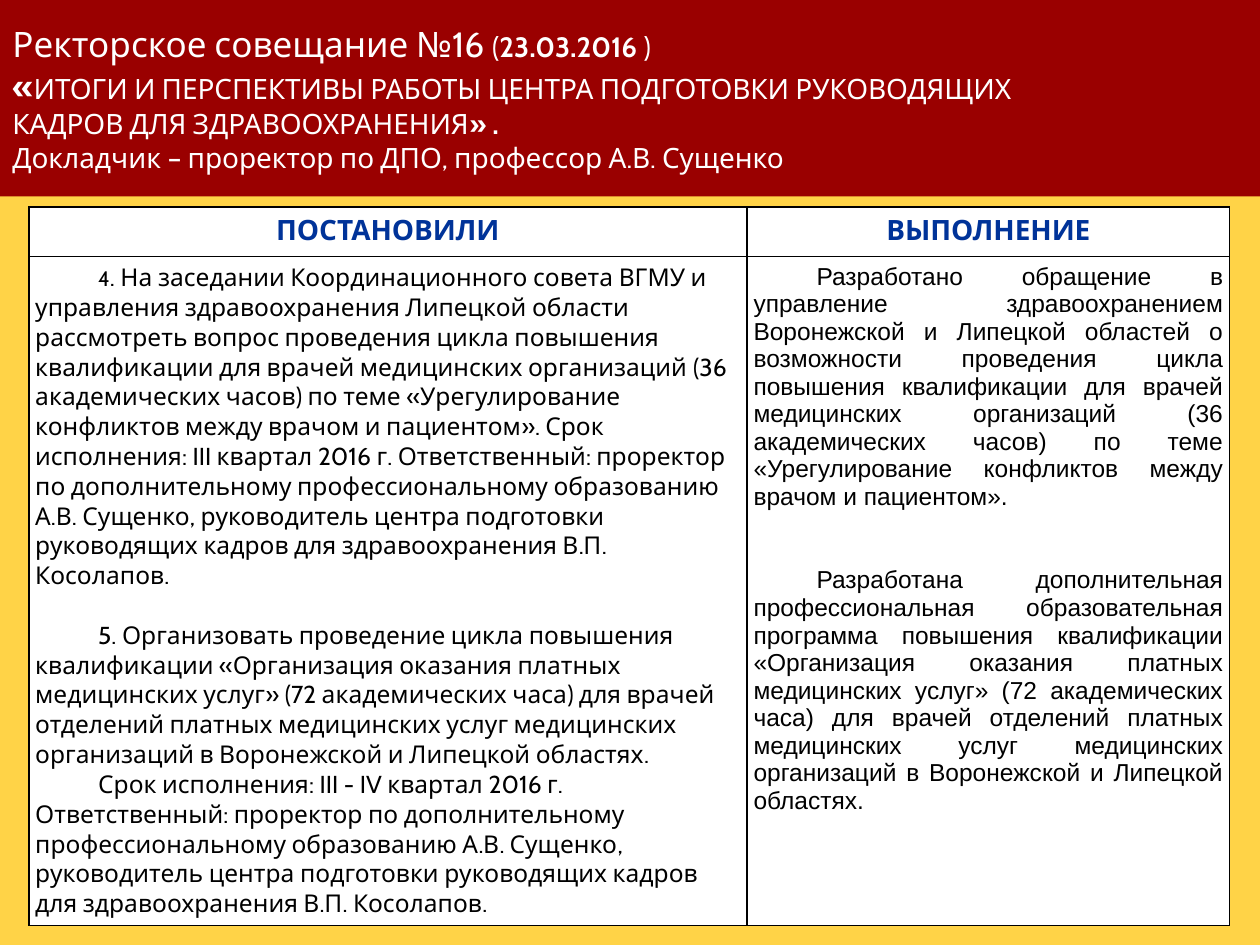
from dataclasses import dataclass

from lxml.etree import SubElement
from pptx import Presentation
from pptx.dml.color import RGBColor
from pptx.enum.shapes import MSO_SHAPE
from pptx.enum.text import MSO_ANCHOR, PP_ALIGN
from pptx.oxml.ns import qn
from pptx.util import Cm, Pt


@dataclass(frozen=True)
class Theme:
    """Colours, fonts and type sizes of the slide."""
    page: str = "FFD347"
    band: str = "9A0000"
    white: str = "FFFFFF"
    black: str = "000000"
    blue: str = "003399"
    main: str = "Cabin"
    plain: str = "Arial"
    title: int = 20
    head: int = 16
    body: int = 14
    small: int = 12


THEME = Theme()

TITLE = [
    [("Ректорское совещание №16 ", THEME.title, False), ("(", THEME.head, False),
     ("23.03.2016 ", THEME.head, True), (")", THEME.head, False)],
    [("«", THEME.title, True),
     ("ИТОГИ И ПЕРСПЕКТИВЫ РАБОТЫ ЦЕНТРА ПОДГОТОВКИ РУКОВОДЯЩИХ", THEME.head, False)],
    [("КАДРОВ ДЛЯ ЗДРАВООХРАНЕНИЯ", THEME.head, False), ("» .", THEME.head, True)],
    [("Докладчик – проректор по ДПО, профессор А.В. Сущенко", THEME.head, False)],
]

HEADS = ["ПОСТАНОВИЛИ", "ВЫПОЛНЕНИЕ"]

ORDERS = [
    (0, [("4", THEME.small),
         (". На заседании Координационного совета ВГМУ и управления здравоохранения "
          "Липецкой области рассмотреть вопрос проведения цикла повышения квалификации "
          "для врачей медицинских организаций (36 академических часов) по теме "
          "«Урегулирование конфликтов между врачом и пациентом». Срок исполнения: "
          "III квартал 2016 г. Ответственный: проректор по дополнительному "
          "профессиональному образованию А.В. Сущенко, руководитель центра подготовки "
          "руководящих кадров для здравоохранения В.П. Косолапов.", THEME.body)]),
    (17, [("5. Организовать проведение цикла повышения квалификации «Организация "
           "оказания платных медицинских услуг» (72 академических часа) для врачей "
           "отделений платных медицинских услуг медицинских организаций в Воронежской "
           "и Липецкой областях.", THEME.body)]),
    (0, [("Срок исполнения: III - IV квартал 2016 г. Ответственный: проректор по "
          "дополнительному профессиональному образованию А.В. Сущенко, руководитель "
          "центра подготовки руководящих кадров для здравоохранения В.П. Косолапов.",
          THEME.body)]),
]

RESULTS = [
    (0, [("Разработано обращение в управление здравоохранением Воронежской и Липецкой "
          "областей о возможности проведения цикла повышения квалификации для врачей "
          "медицинских организаций (36 академических часов) по теме «Урегулирование "
          "конфликтов между врачом и пациентом».", THEME.body)]),
    (32, [("Разработана дополнительная профессиональная образовательная программа "
           "повышения квалификации «Организация оказания платных медицинских услуг» "
           "(72 академических часа) для врачей отделений платных медицинских услуг "
           "медицинских организаций в Воронежской и Липецкой областях.", THEME.body)]),
]


def paint(fill, tone):
    """Fill with one solid colour."""
    fill.solid()
    fill.fore_color.rgb = RGBColor.from_string(tone)


def add_run(para, text, size, tone, face=THEME.main, bold=False):
    """Add one styled run to a paragraph."""
    run = para.add_run()
    run.text = text
    font = run.font
    font.name, font.size, font.bold = face, Pt(size), bold
    font.color.rgb = RGBColor.from_string(tone)


def add_band(slide, left, top, width, height):
    """Draw the title band with its lines of text."""
    band = slide.shapes.add_shape(MSO_SHAPE.RECTANGLE, left, top, width, height)
    band.shadow.inherit = False
    paint(band.fill, THEME.band)
    band.line.fill.background()
    frame = band.text_frame
    frame.word_wrap = True
    frame.vertical_anchor = MSO_ANCHOR.MIDDLE
    para = frame.paragraphs[0]
    para.alignment = PP_ALIGN.LEFT
    for row, line in enumerate(TITLE):
        if row:
            para.add_line_break()
        for text, size, bold in line:
            add_run(para, text, size, THEME.white, bold=bold)


def style_cell(cell):
    """Give a cell its margins, white fill and thin black borders."""
    cell.margin_left = cell.margin_right = Cm(0.13)
    cell.margin_top = cell.margin_bottom = Cm(0.13)
    props = cell._tc.get_or_add_tcPr()
    for side in ("lnL", "lnR", "lnT", "lnB"):
        edge = SubElement(props, qn(f"a:{side}"), w=str(Pt(1)))
        tint = SubElement(edge, qn("a:solidFill"))
        SubElement(tint, qn("a:srgbClr"), val=THEME.black)
    paint(cell.fill, THEME.white)


def fill_body(cell, items, face, align):
    """Write indented paragraphs into a body cell."""
    frame = cell.text_frame
    for index, (gap, runs) in enumerate(items):
        para = frame.add_paragraph() if index else frame.paragraphs[0]
        para.alignment = align
        para._p.get_or_add_pPr().set("indent", str(Cm(1.27)))
        if gap:
            para.space_before = Pt(gap)
        for text, size in runs:
            add_run(para, text, size, THEME.black, face)


def add_grid(slide, left, top, width, height):
    """Place the table of decisions and their results."""
    grid = slide.shapes.add_table(2, 2, left, top, width, height).table
    grid.first_row = grid.horz_banding = False
    first, head = Cm(14.48), Cm(1)
    grid.columns[0].width, grid.columns[1].width = first, width - first
    grid.rows[0].height, grid.rows[1].height = head, height - head
    for cell in grid.iter_cells():
        style_cell(cell)
    for col, text in enumerate(HEADS):
        para = grid.cell(0, col).text_frame.paragraphs[0]
        para.alignment = PP_ALIGN.CENTER
        add_run(para, text, THEME.head, THEME.blue, bold=True)
    fill_body(grid.cell(1, 0), ORDERS, THEME.main, PP_ALIGN.LEFT)
    fill_body(grid.cell(1, 1), RESULTS, THEME.plain, PP_ALIGN.JUSTIFY)


def main():
    """Build and save the slide."""
    deck = Presentation()
    deck.slide_width, deck.slide_height = Cm(25.4), Cm(19.05)
    slide = deck.slides.add_slide(deck.slide_layouts[6])
    paint(slide.background.fill, THEME.page)
    add_grid(slide, Cm(0.58), Cm(4.17), Cm(24.21), Cm(14.46))
    add_band(slide, 0, 0, deck.slide_width, Cm(3.96))
    deck.save("out.pptx")


if __name__ == "__main__":
    main()
